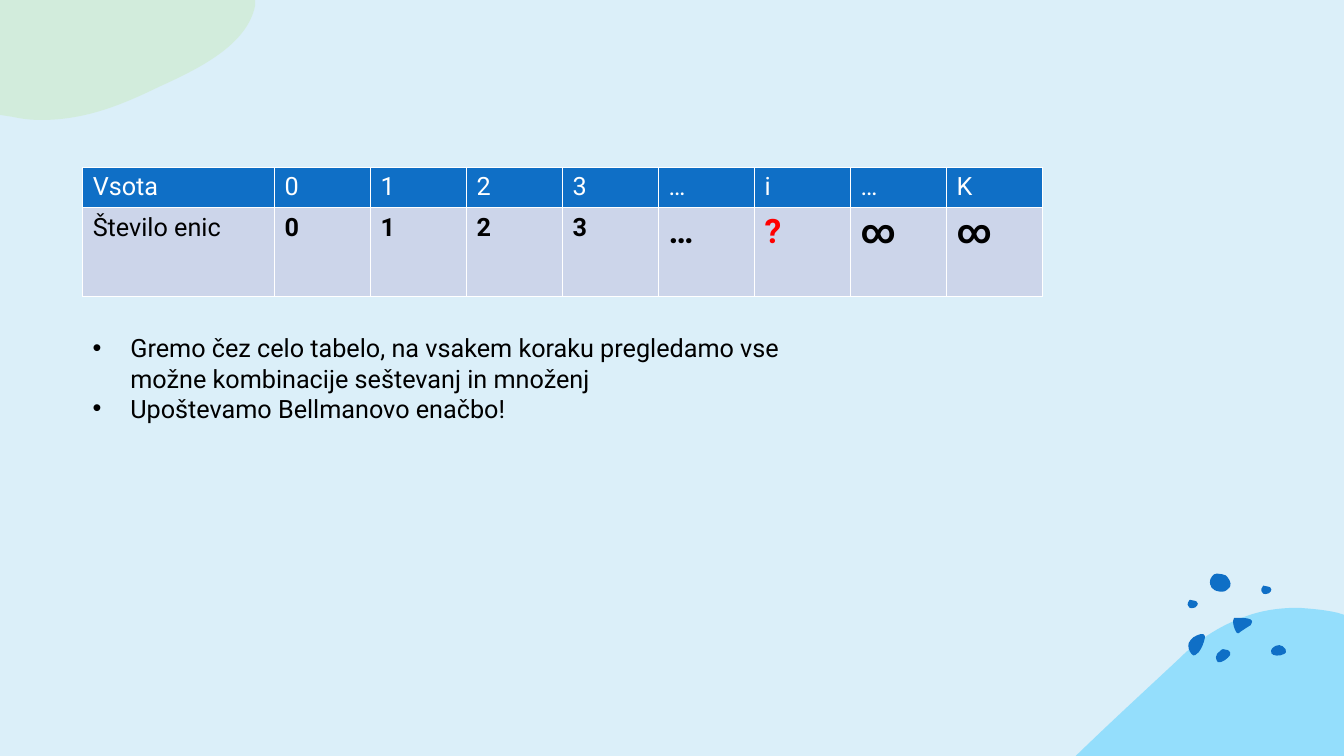
"""Build a slide with a table of sums, two bullets and soft corner shapes."""
from lxml.etree import SubElement as Sub
from pptx import Presentation
from pptx.dml.color import RGBColor
from pptx.enum.text import MSO_AUTO_SIZE as Auto
from pptx.oxml.ns import qn
from pptx.util import Inches, Pt

WIDE, HIGH = 13.33, 7.5
FONT = "Roboto"
PALE, BLUE, GREY = "DBEFF9", "0F6FC6", "CCD5EA"
WHITE, BLACK, RED = "FFFFFF", "000000", "FF0000"

HEAD = ["Vsota", "0", "1", "2", "3", "…", "i", "…", "K"]
ONES = ["Število enic", "0", "1", "2", "3", "…", "?", "∞", "∞"]
NOTES = [
    "Gremo čez celo tabelo, na vsakem koraku pregledamo vse možne kombinacije seštevanj in množenj",
    "Upoštevamo Bellmanovo enačbo!",
]
LEFT, TOP, UNIT = 0.82, 1.66, 9.52 / (len(HEAD) + 1)
ROWS = (0.4, 0.88)

HILL = [(12.88, 6.03), (13.01, 6.04, 13.14, 6.05, 13.27, 6.08), (WIDE, 6.1),
        (WIDE, HIGH), (10.67, HIGH), (10.68, 7.49),
        (11.02, 7.16, 11.37, 6.84, 11.69, 6.54),
        (11.91, 6.32, 12.14, 6.19, 12.37, 6.11),
        (12.54, 6.05, 12.71, 6.03, 12.88, 6.03)]
LEAF = [(0, 0), (2.53, 0), (2.53, 0.06), (2.45, 0.44, 2, 0.67, 1.58, 0.86),
        (1.23, 1.03, 0.86, 1.19, 0.41, 1.19),
        (0.31, 1.19, 0.22, 1.18, 0.13, 1.16), (0, 1.14), (0, 0)]
PEBBLE = [(12.51, 5.86), (12.51, 5.86, 12.51, 5.82, 12.53, 5.81),
          (12.55, 5.81, 12.56, 5.81, 12.58, 5.82),
          (12.59, 5.82, 12.61, 5.83, 12.61, 5.85),
          (12.61, 5.86, 12.6, 5.88, 12.59, 5.88),
          (12.59, 5.88, 12.59, 5.89, 12.57, 5.89),
          (12.56, 5.89, 12.54, 5.9, 12.53, 5.89),
          (12.52, 5.87, 12.51, 5.87, 12.51, 5.86)]
DOTS = [
    [(12.13, 6.44), (12.15, 6.44, 12.16, 6.44, 12.18, 6.45),
     (12.2, 6.46, 12.21, 6.48, 12.2, 6.5),
     (12.18, 6.53, 12.12, 6.58, 12.08, 6.57),
     (12.07, 6.56, 12.06, 6.54, 12.06, 6.52),
     (12.06, 6.5, 12.08, 6.47, 12.1, 6.46),
     (12.11, 6.45, 12.12, 6.44, 12.13, 6.44)],
    [(11.91, 6.29), (11.93, 6.29, 11.95, 6.29, 11.95, 6.31),
     (11.95, 6.32, 11.95, 6.32, 11.95, 6.33),
     (11.94, 6.38, 11.92, 6.43, 11.89, 6.47),
     (11.87, 6.49, 11.84, 6.52, 11.82, 6.49),
     (11.79, 6.46, 11.78, 6.41, 11.79, 6.38),
     (11.8, 6.35, 11.82, 6.34, 11.84, 6.32),
     (11.85, 6.32, 11.88, 6.29, 11.91, 6.29)],
    [(12.69, 6.4), (12.71, 6.4, 12.74, 6.42, 12.75, 6.44),
     (12.76, 6.46, 12.76, 6.48, 12.73, 6.49),
     (12.7, 6.51, 12.62, 6.51, 12.61, 6.48),
     (12.6, 6.46, 12.61, 6.44, 12.62, 6.43),
     (12.64, 6.41, 12.66, 6.4, 12.69, 6.4)],
    [(12.01, 5.81), (12, 5.81, 11.99, 5.75, 12.02, 5.72),
     (12.04, 5.7, 12.04, 5.69, 12.07, 5.69),
     (12.1, 5.69, 12.14, 5.7, 12.16, 5.71),
     (12.18, 5.73, 12.22, 5.78, 12.2, 5.82),
     (12.17, 5.85, 12.16, 5.87, 12.12, 5.87),
     (12.09, 5.87, 12.04, 5.86, 12.03, 5.84),
     (12.01, 5.83, 12.01, 5.82, 12.01, 5.81)],
    [(12.28, 6.13), (12.34, 6.13, 12.45, 6.13, 12.41, 6.19),
     (12.41, 6.2, 12.4, 6.21, 12.39, 6.21),
     (12.36, 6.23, 12.33, 6.25, 12.3, 6.27),
     (12.29, 6.28, 12.28, 6.29, 12.27, 6.28),
     (12.27, 6.28, 12.26, 6.27, 12.26, 6.27),
     (12.24, 6.23, 12.23, 6.2, 12.23, 6.16),
     (12.23, 6.15, 12.23, 6.14, 12.24, 6.13),
     (12.24, 6.13, 12.25, 6.13, 12.25, 6.13),
     (12.26, 6.13, 12.27, 6.13, 12.28, 6.13)],
]


def paint(fill, color, alpha=None):
    fill.solid()
    fill.fore_color.rgb = RGBColor.from_string(color)
    if alpha:
        tint = fill._xPr.find(qn("a:solidFill"))[0]
        Sub(tint, qn("a:alpha"), val=str(alpha * 1000))


def style(para, color, size=18, bold=False):
    for run in para.runs:
        font = run.font
        font.name, font.size, font.bold = FONT, Pt(size), bold
        font.color.rgb = RGBColor.from_string(color)


def bend(shape, steps):
    lines = list(shape._element.iter(qn("a:lnTo")))
    for line, step in zip(lines, steps[1:]):
        if len(step) == 6:
            home = line.getparent()
            curve = Sub(home, qn("a:cubicBezTo"))
            home.replace(line, curve)
            for x, y in zip(step[::2], step[1::2]):
                Sub(curve, qn("a:pt"), x=str(Inches(x) - shape.left),
                    y=str(Inches(y) - shape.top))


def blob(slide, steps, color, alpha=None):
    ends = [(Inches(step[-2]), Inches(step[-1])) for step in steps]
    pen = slide.shapes.build_freeform(*ends[0])
    pen.add_line_segments(ends[1:], close=True)
    shape = pen.convert_to_shape()
    bend(shape, steps)
    shape.shadow.inherit = False
    shape.line.fill.background()
    paint(shape.fill, color, alpha)


def move(steps, right, down):
    return [tuple(v + (down if n % 2 else right) for n, v in enumerate(step))
            for step in steps]


def edge(cell):
    props = cell._tc.get_or_add_tcPr()
    for spot, side in enumerate(("a:lnL", "a:lnR", "a:lnT", "a:lnB")):
        line = Sub(props, qn(side), w=str(Pt(1)))
        Sub(Sub(line, qn("a:solidFill")), qn("a:srgbClr"), val=WHITE)
        props.insert(spot, line)


def grid(slide):
    table = slide.shapes.add_table(
        2, len(HEAD), Inches(LEFT), Inches(TOP),
        Inches(UNIT * (len(HEAD) + 1)), Inches(sum(ROWS))).table
    for n, col in enumerate(table.columns):
        col.width = Inches(UNIT * (1 if n else 2))
    for r, (texts, tall) in enumerate(zip((HEAD, ONES), ROWS)):
        table.rows[r].height = Inches(tall)
        for c, text in enumerate(texts):
            cell = table.cell(r, c)
            cell.text_frame.text = text
            color = WHITE if r == 0 else RED if text == "?" else BLACK
            size = 24 if r and text in "…?∞" else 18
            style(cell.text_frame.paragraphs[0], color, size, bool(r and c))
            paint(cell.fill, GREY if r else BLUE)
            edge(cell)


def notes(slide):
    frame = slide.shapes.add_textbox(
        Inches(LEFT), Inches(3.25), Inches(7.6), Inches(1.01)).text_frame
    frame.word_wrap = True
    frame.auto_size = Auto.SHAPE_TO_FIT_TEXT
    frame.text = "\n".join(NOTES)
    indent = Pt(27)
    for para in frame.paragraphs:
        style(para, BLACK)
        props = para._p.get_or_add_pPr()
        props.set("marL", str(indent))
        props.set("indent", str(-indent))
        Sub(props, qn("a:buFont"), typeface="Arial")
        Sub(props, qn("a:buChar"), char="•")


def main():
    deck = Presentation()
    deck.slide_width, deck.slide_height = Inches(WIDE), Inches(HIGH)
    slide = deck.slides.add_slide(deck.slide_layouts[6])
    paint(slide.background.fill, PALE)
    blob(slide, HILL, "4FCEFF", 50)
    for dot in DOTS + [PEBBLE, move(PEBBLE, -0.73, 0.14)]:
        blob(slide, dot, BLUE)
    blob(slide, LEAF, "CBEAC0", 50)
    grid(slide)
    notes(slide)
    deck.save("out.pptx")


if __name__ == "__main__":
    main()
